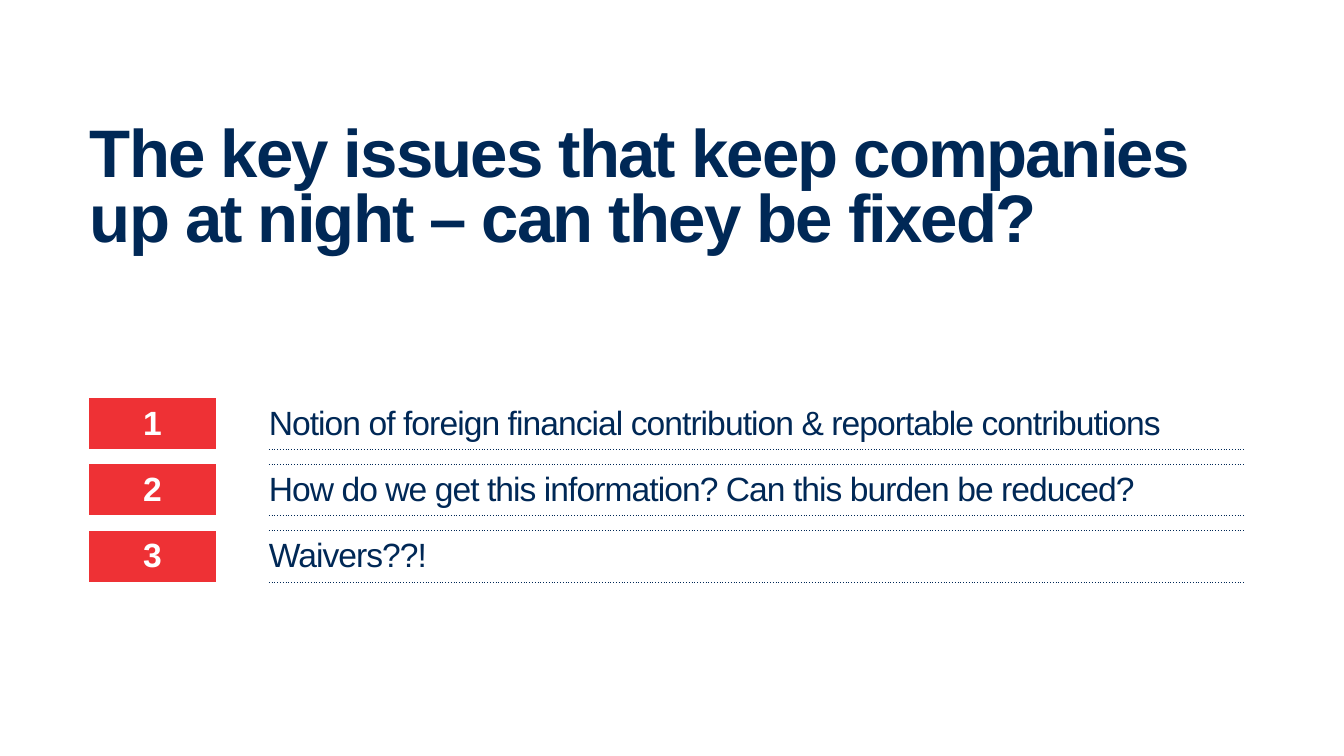
from dataclasses import dataclass

from lxml import etree
from pptx import Presentation
from pptx.dml.color import RGBColor
from pptx.enum.text import MSO_ANCHOR, MSO_AUTO_SIZE, PP_ALIGN
from pptx.oxml.ns import qn
from pptx.util import Pt

LEFT, CENTER = PP_ALIGN.LEFT, PP_ALIGN.CENTER
TOP, MIDDLE = MSO_ANCHOR.TOP, MSO_ANCHOR.MIDDLE
NO_AUTOFIT = MSO_AUTO_SIZE.NONE

NAVY, RED, WHITE = "002856", "EE3135", "FFFFFF"
FONT = "Arial"
TITLE = "The key issues that keep companies up at night – can they be fixed?"
ISSUES = [
    "Notion of foreign financial contribution & reportable contributions",
    "How do we get this information? Can this burden be reduced?",
    "Waivers??!",
]

TABLE_LEFT, TABLE_TOP = 47.5, 213.1
COLUMN_WIDTHS = (68.4, 28.1, 522.5)
ISSUE_HEIGHT, SPACER_HEIGHT = 27.4, 8.2
PLAIN_TABLE_STYLE = "{2D5ABB26-0587-4C30-8999-92F81FD0307C}"


@dataclass(frozen=True)
class TextStyle:
    size: float
    color: str
    bold: bool
    spacing: float = 0
    alignment: PP_ALIGN = LEFT


TITLE_STYLE = TextStyle(36, NAVY, True, -1)
NUMBER_STYLE = TextStyle(18, WHITE, True, alignment=CENTER)
ISSUE_STYLE = TextStyle(18, NAVY, False, -0.5)


def rgb(color: str) -> RGBColor:
    return RGBColor.from_string(color)


def set_attributes(target, values: dict) -> None:
    for name, value in values.items():
        setattr(target, name, value)


def write_text(text_frame, text: str, style: TextStyle) -> None:
    paragraph = text_frame.paragraphs[0]
    paragraph.alignment = style.alignment
    run = paragraph.add_run()
    run.text = text
    set_attributes(run.font, {"name": FONT, "size": Pt(style.size), "bold": style.bold})
    run.font.color.rgb = rgb(style.color)
    if style.spacing:
        run.font._element.set("spc", str(round(style.spacing * 100)))


def set_margins(target, horizontal: float, vertical: float) -> None:
    set_attributes(target, {
        "margin_left": Pt(horizontal), "margin_right": Pt(horizontal),
        "margin_top": Pt(vertical), "margin_bottom": Pt(vertical),
    })


def add_dotted_border(cell, tag: str) -> None:
    line = etree.Element(qn(tag), w=str(Pt(0.25)))
    fill = etree.SubElement(line, qn("a:solidFill"))
    etree.SubElement(fill, qn("a:srgbClr"), val=NAVY)
    etree.SubElement(line, qn("a:prstDash"), val="sysDot")
    cell._tc.get_or_add_tcPr().insert(0, line)


def shrink_empty_cell(cell) -> None:
    """Keep an empty cell from stretching its row."""
    set_margins(cell, 0, 0)
    paragraph = cell.text_frame.paragraphs[0]
    etree.SubElement(paragraph._p, qn("a:endParaRPr"), sz="100")


def add_title(slide) -> None:
    title = slide.shapes.title
    set_attributes(title, {
        "left": Pt(48.2), "top": Pt(67.7), "width": Pt(623.5), "height": Pt(58.3),
    })
    text_frame = title.text_frame
    set_margins(text_frame, 0, 0)
    set_attributes(text_frame, {
        "word_wrap": True, "auto_size": NO_AUTOFIT, "vertical_anchor": TOP,
    })
    write_text(text_frame, TITLE, TITLE_STYLE)
    text_frame.paragraphs[0].line_spacing = 0.8


def add_issue_table(slide) -> None:
    row_heights = (ISSUE_HEIGHT, SPACER_HEIGHT) * len(ISSUES)
    table = slide.shapes.add_table(
        len(row_heights), len(COLUMN_WIDTHS), Pt(TABLE_LEFT), Pt(TABLE_TOP),
        Pt(sum(COLUMN_WIDTHS)), Pt(sum(row_heights)),
    ).table
    set_attributes(table, {"first_row": False, "horz_banding": False})
    table._tbl.tblPr.find(qn("a:tableStyleId")).text = PLAIN_TABLE_STYLE
    for column, width in zip(table.columns, COLUMN_WIDTHS):
        column.width = Pt(width)
    for row, height in zip(table.rows, row_heights):
        row.height = Pt(height)
    for cell in table.iter_cells():
        cell.fill.background()
        cell.vertical_anchor = MIDDLE

    # Each issue row is followed by a thin spacer row
    for index, issue in enumerate(ISSUES):
        number, gap, label = table.rows[2 * index].cells
        spacers = list(table.rows[2 * index + 1].cells)
        number.fill.solid()
        number.fill.fore_color.rgb = rgb(RED)
        set_margins(number, 7.2, 3)
        set_margins(label, 0, 3)
        write_text(number.text_frame, str(index + 1), NUMBER_STYLE)
        write_text(label.text_frame, issue, ISSUE_STYLE)
        for empty in (gap, *spacers):
            shrink_empty_cell(empty)
        add_dotted_border(label, "a:lnB")
        add_dotted_border(spacers[-1], "a:lnT")


def main() -> None:
    presentation = Presentation()
    set_attributes(presentation, {"slide_width": Pt(720), "slide_height": Pt(405)})
    title_only = presentation.slide_layouts[5]
    slide = presentation.slides.add_slide(title_only)
    add_title(slide)
    add_issue_table(slide)
    presentation.save("out.pptx")


if __name__ == "__main__":
    main()
